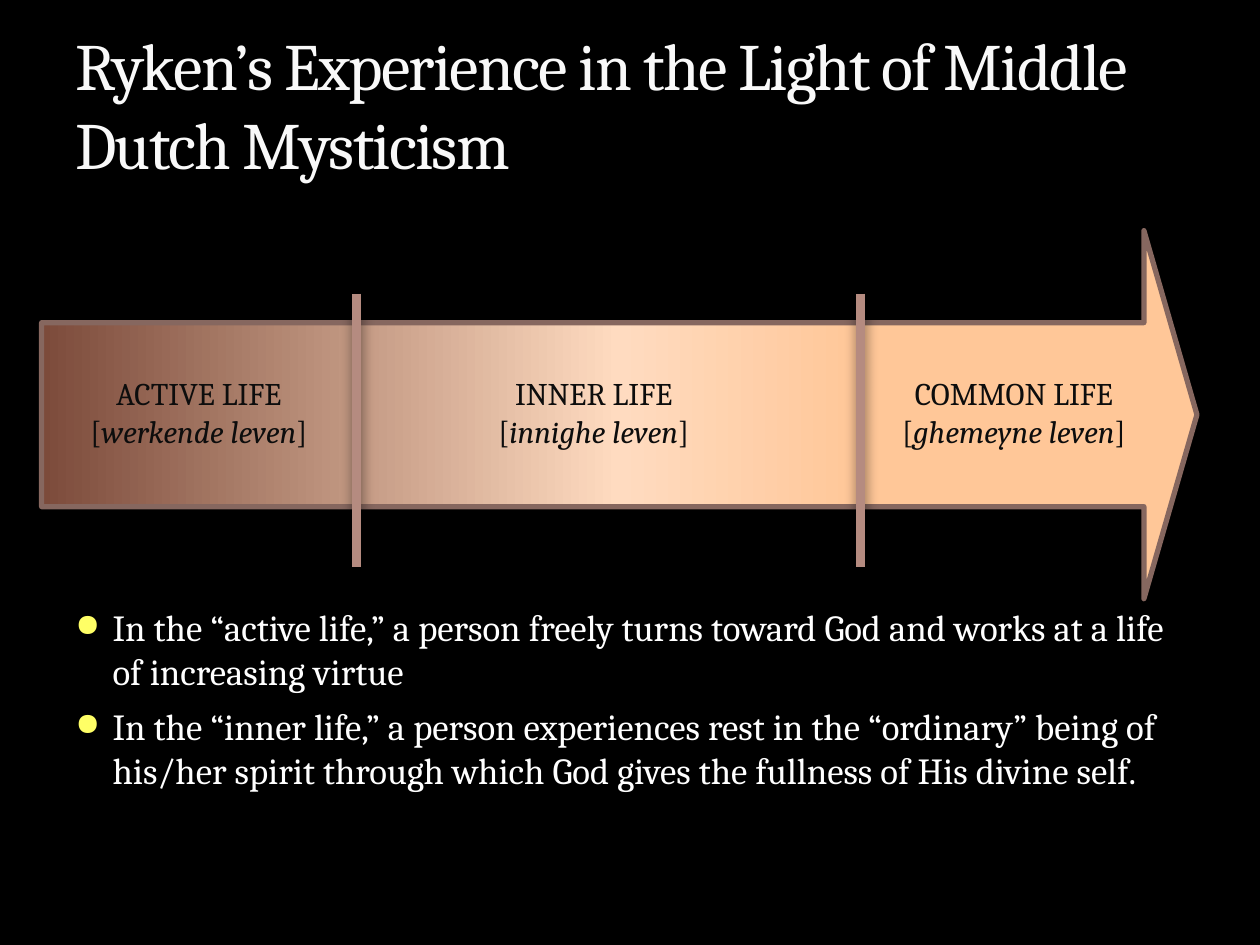
import copy
from dataclasses import dataclass

import pptx
import pptx.dml.color
import pptx.enum.shapes
import pptx.enum.text
import pptx.oxml
import pptx.oxml.ns
import pptx.util
from pptx.util import Cm

QN = pptx.oxml.ns.qn
NAMESPACE = pptx.oxml.ns.nsdecls("a")


@dataclass(frozen=True)
class Theme:
    font: str = "Cambria"
    background: str = "000000"
    title: str = "F9F9F9"
    body: str = "FFFFFF"
    label: str = "0D0D0D"
    bullet: str = "FFFF66"
    arrow_line: str = "86675F"
    arrow_stops: tuple = ((0.29, "FFC798"), (0.5, "FFDBC0"), (1, "7C4B3B"))
    divider: str = "B58B80"
    shadow: str = "000000"
    title_size: float = 37.8
    body_size: float = 21
    label_size: float = 18


THEME = Theme()


def rgb(color):
    return pptx.dml.color.RGBColor.from_string(color)


def add_run(paragraph, text, size, color, italic=False):
    run = paragraph.add_run()
    run.text = text
    run.font.name = THEME.font
    run.font.size = pptx.util.Pt(size)
    run.font.color.rgb = rgb(color)
    run.font.italic = italic
    return run


def add_text_frame(slide, left, top, width, height):
    box = slide.shapes.add_textbox(Cm(left), Cm(top), Cm(width), Cm(height))
    box.text_frame.word_wrap = True
    return box.text_frame


def add_title(slide, text):
    frame = add_text_frame(slide, 1.27, 0.43, 22.86, 3.38)
    frame.vertical_anchor = pptx.enum.text.MSO_ANCHOR.BOTTOM
    run = add_run(frame.paragraphs[0], text, THEME.title_size, THEME.title)
    run.font._element.set("spc", "-100")


def add_bullets(slide, items):
    frame = add_text_frame(slide, 1.27, 12.07, 22.86, 4.87)
    for index, item in enumerate(items):
        paragraph = frame.add_paragraph() if index else frame.paragraphs[0]
        if index:
            paragraph.space_before = pptx.util.Pt(6)
        properties = paragraph._p.get_or_add_pPr()
        properties.set("marL", str(Cm(0.75)))
        properties.set("indent", str(Cm(-0.75)))
        for element in (
            f'<a:buClr {NAMESPACE}><a:srgbClr val="{THEME.bullet}"/></a:buClr>',
            f'<a:buSzPct {NAMESPACE} val="85000"/>',
            f'<a:buChar {NAMESPACE} char="●"/>',
        ):
            properties.append(pptx.oxml.parse_xml(element))
        add_run(paragraph, item, THEME.body_size, THEME.body)


def add_arrow(slide):
    arrow = slide.shapes.add_shape(
        pptx.enum.shapes.MSO_SHAPE.RIGHT_ARROW,
        Cm(0.84), Cm(4.65), Cm(23.29), Cm(7.42))
    arrow.shadow.inherit = False
    arrow.adjustments[0] = 0.5
    arrow.adjustments[1] = 0.144
    arrow.line.color.rgb = rgb(THEME.arrow_line)
    arrow.line.width = pptx.util.Pt(3)
    arrow.fill.gradient()
    arrow.fill.gradient_angle = 180
    stop_list = arrow._element.spPr.find(".//" + QN("a:gsLst"))
    stop_list.append(copy.deepcopy(stop_list[-1]))
    for stop, (position, color) in zip(arrow.fill.gradient_stops, THEME.arrow_stops):
        stop.position = position
        stop.color.rgb = rgb(color)


def add_stage_label(slide, left, width, name, dutch_name):
    frame = add_text_frame(slide, left, 7.42, width, 1.8)
    frame.auto_size = pptx.enum.text.MSO_AUTO_SIZE.SHAPE_TO_FIT_TEXT
    paragraphs = (frame.paragraphs[0], frame.add_paragraph())
    for paragraph in paragraphs:
        paragraph.alignment = pptx.enum.text.PP_ALIGN.CENTER
    add_run(paragraphs[0], name, THEME.label_size, THEME.label)
    for text, italic in (("[", False), (dutch_name, True), ("]", False)):
        add_run(paragraphs[1], text, THEME.label_size, THEME.label, italic)


def add_divider(slide, x):
    """Draw a vertical line with a soft shadow between two stages."""
    divider = slide.shapes.add_connector(
        pptx.enum.shapes.MSO_CONNECTOR.STRAIGHT,
        Cm(x), Cm(5.92), Cm(x), Cm(11.43))
    divider.line.color.rgb = rgb(THEME.divider)
    divider.line.width = pptx.util.Pt(5)
    divider._element.spPr.append(pptx.oxml.parse_xml(
        f'<a:effectLst {NAMESPACE}>'
        f'<a:outerShdw blurRad="{pptx.util.Pt(7.5)}" dist="0" dir="0">'
        f'<a:srgbClr val="{THEME.shadow}"><a:alpha val="50000"/></a:srgbClr>'
        f'</a:outerShdw></a:effectLst>'))


def main():
    presentation = pptx.Presentation()
    presentation.slide_width = Cm(25.4)
    presentation.slide_height = Cm(19.05)
    slide = presentation.slides.add_slide(presentation.slide_layouts[6])
    slide.background.fill.solid()
    slide.background.fill.fore_color.rgb = rgb(THEME.background)

    add_bullets(slide, (
        "In the “active life,” a person freely turns toward God and works "
        "at a life of increasing virtue",
        "In the “inner life,” a person experiences rest in the “ordinary” being "
        "of his/her spirit through which God gives the fullness of His divine self.",
    ))
    add_title(slide, "Ryken’s Experience in the Light of Middle Dutch Mysticism")
    add_arrow(slide)
    for left, width, name, dutch_name in (
        (1.47, 5.08, "ACTIVE LIFE", "werkende leven"),
        (9.53, 4.88, "INNER LIFE", "innighe leven"),
        (17.58, 5.72, "COMMON LIFE", "ghemeyne leven"),
    ):
        add_stage_label(slide, left, width, name, dutch_name)
    for x in (17.35, 7.19):
        add_divider(slide, x)

    presentation.save("out.pptx")


if __name__ == "__main__":
    main()
